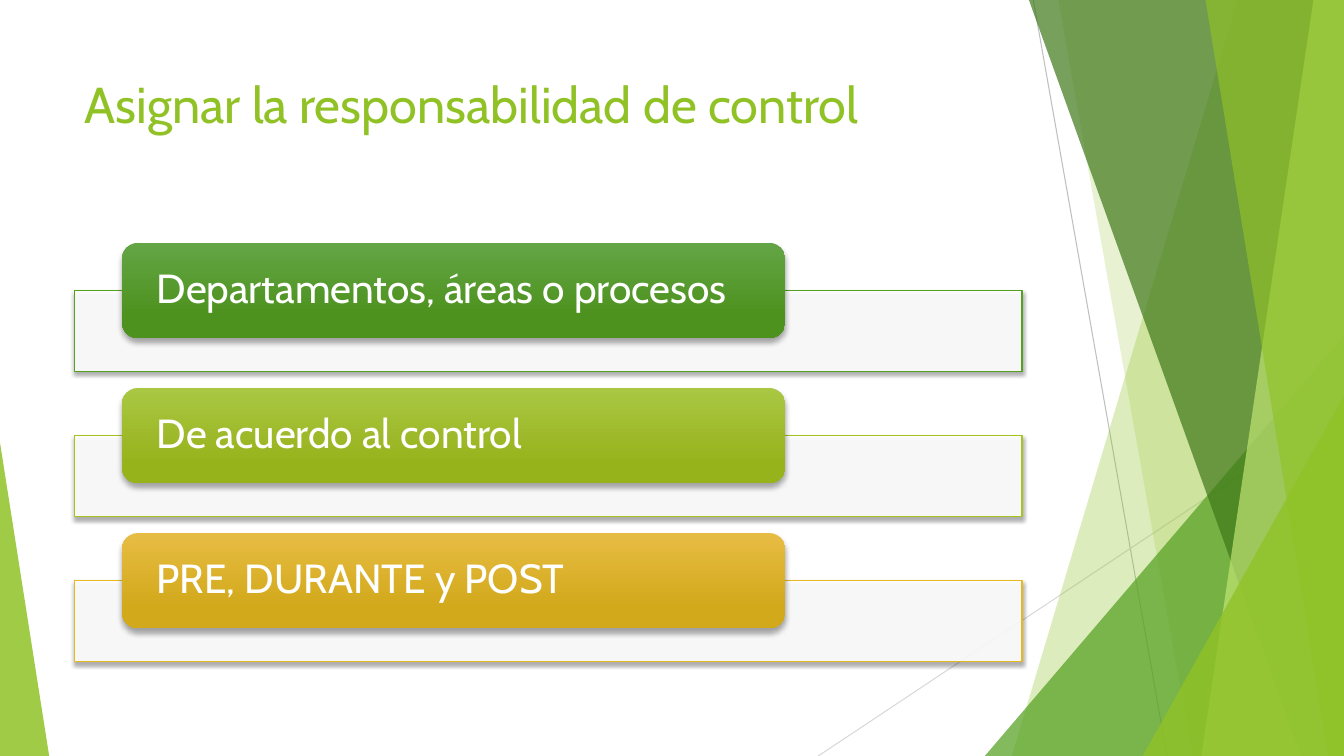
from collections import namedtuple
from dataclasses import dataclass

from lxml import etree
from pptx import Presentation
from pptx.dml.color import RGBColor
from pptx.enum import shapes, text
from pptx.oxml import ns
from pptx.util import Cm, Pt

Box = namedtuple("Box", "left top width height")
Card = namedtuple("Card", "label line light dark")


@dataclass(frozen=True)
class Theme:
    font: str = "Cabin"
    title_size: int = 36
    card_size: int = 29
    lime: str = "90C226"
    green: str = "54A021"
    forest: str = "3F7819"
    pale: str = "C0E474"
    white: str = "FFFFFF"
    shadow: str = "000000"
    ray_dark: str = "BFBFBF"
    ray_light: str = "D9D9D9"


THEME = Theme()
SLIDE = Box(0, 0, 33.87, 19.05)
CARDS = [
    Card("Departamentos, áreas o procesos", THEME.green, "63A545", "4D921E"),
    Card("De acuerdo al control", "A5C41F", "AAC744", "97B31C"),
    Card("PRE, DURANTE y POST", "E6B91E", "E7BC43", "D2A91B"),
]


def rgb(color):
    return RGBColor.from_string(color)


def add_alpha(color_element, percent):
    etree.SubElement(color_element, ns.qn("a:alpha"), val=str(percent * 1000))


def fill_solid(shape, color, opacity):
    shape.shadow.inherit = False
    shape.fill.solid()
    shape.fill.fore_color.rgb = rgb(color)
    add_alpha(shape.fill._xPr.find(".//" + ns.qn("a:srgbClr")), opacity)
    shape.line.fill.background()


def add_drop_shadow(shape, blur, distance):
    shape.shadow.inherit = False
    effects = shape._element.spPr.find(ns.qn("a:effectLst"))
    outer = etree.SubElement(
        effects, ns.qn("a:outerShdw"), blurRad=str(Pt(blur)),
        dist=str(Pt(distance)), dir="5400000", rotWithShape="0")
    color = etree.SubElement(outer, ns.qn("a:srgbClr"), val=THEME.shadow)
    add_alpha(color, 35)


def write(frame, content, *, size, color, anchor, side=0.25, edge=0.13, spacing=1.0):
    frame.word_wrap = True
    frame.auto_size = text.MSO_AUTO_SIZE.NONE
    frame.vertical_anchor = anchor
    frame.margin_left = frame.margin_right = Cm(side)
    frame.margin_top = frame.margin_bottom = Cm(edge)
    paragraph = frame.paragraphs[0]
    paragraph.alignment = text.PP_ALIGN.LEFT
    paragraph.line_spacing = spacing
    run = paragraph.add_run()
    run.text = content
    run.font.name = THEME.font
    run.font.size = Pt(size)
    run.font.color.rgb = rgb(color)


def add_preset(slide, kind, box):
    return slide.shapes.add_shape(kind, *(Cm(length) for length in box))


def add_ray(slide, start, end, color):
    ray = slide.shapes.add_connector(
        shapes.MSO_CONNECTOR.STRAIGHT, *(Cm(length) for length in start + end))
    ray.line.color.rgb = rgb(color)
    ray.line.width = Pt(0.75)
    etree.SubElement(ray._element.spPr, ns.qn("a:effectLst"))


def add_facet(slide, box, top_x, bottom_x, color, opacity):
    """Draw a band from a slanted left edge to the right side of the box."""
    right, bottom = box.left + box.width, box.top + box.height
    corners = [(box.left + top_x, box.top), (right, box.top),
               (right, bottom), (box.left + bottom_x, bottom)]
    points = [(Cm(x), Cm(y)) for x, y in corners]
    builder = slide.shapes.build_freeform(*points[0])
    builder.add_line_segments(points[1:], close=True)
    fill_solid(builder.convert_to_shape(), color, opacity)


def add_wedge(slide, box, apex, color, opacity):
    wedge = add_preset(slide, shapes.MSO_SHAPE.ISOSCELES_TRIANGLE, box)
    wedge.adjustments[0] = apex
    fill_solid(wedge, color, opacity)


def add_corner_wedge(slide, box, x, y, color, opacity):
    """Fill the lower right corner of the box, starting at the offset x, y."""
    corner = Box(box.left + x, box.top + y, box.width - x, box.height - y)
    add_wedge(slide, corner, 1, color, opacity)


def add_facets(slide, box):
    bottom = box.top + box.height
    add_ray(slide, (box.left + 5.42, box.top), (box.left + 8.79, bottom),
            THEME.ray_dark)
    add_ray(slide, (box.left + box.width, box.top + 10.24), (box.left, bottom),
            THEME.ray_light)
    add_facet(slide, box, 10.57, 4.88, THEME.lime, 30)
    add_facet(slide, box, 6.05, 9.43, THEME.lime, 20)
    add_corner_wedge(slide, box, 4.2, 8.46, THEME.green, 72)
    add_facet(slide, box, 5.31, 12.17, THEME.forest, 70)
    add_facet(slide, box, 12.48, 9.66, THEME.pale, 70)
    add_facet(slide, box, 9.76, 12.86, THEME.lime, 65)
    add_corner_wedge(slide, box, 8.18, 9.98, THEME.lime, 80)


def add_title(slide, box):
    title = slide.shapes.title
    title.left, title.top, title.width, title.height = (Cm(n) for n in box)
    write(title.text_frame, "Asignar la responsabilidad de control",
          size=THEME.title_size, color=THEME.lime, anchor=text.MSO_ANCHOR.TOP)


def add_card(slide, box, card):
    """Draw a pale panel with a coloured label over its upper edge."""
    label_height = 2.4
    overlap = label_height / 2
    panel = add_preset(slide, shapes.MSO_SHAPE.RECTANGLE, Box(
        box.left, box.top + overlap, box.width, box.height - overlap))
    fill_solid(panel, THEME.white, 90)
    panel.line.color.rgb = rgb(card.line)
    panel.line.width = Pt(1)
    add_drop_shadow(panel, 3, 2)

    label = add_preset(slide, shapes.MSO_SHAPE.ROUNDED_RECTANGLE, Box(
        box.left + box.width * 0.05, box.top, box.width * 0.7, label_height))
    label.fill.gradient()
    label.fill.gradient_angle = 270
    stops = zip(label.fill.gradient_stops, (0, 0.78), (card.light, card.dark))
    for stop, position, color in stops:
        stop.position = position
        stop.color.rgb = rgb(color)
    label.line.fill.background()
    add_drop_shadow(label, 4, 3)
    write(label.text_frame, card.label, size=THEME.card_size, color=THEME.white,
          anchor=text.MSO_ANCHOR.MIDDLE, side=0.76, edge=0, spacing=0.9)


def add_cards(slide, box):
    gap = 0.42
    height = (box.height - gap * (len(CARDS) - 1)) / len(CARDS)
    for row, card in enumerate(CARDS):
        top = box.top + row * (height + gap)
        add_card(slide, Box(box.left, top, box.width, height), card)


def main():
    deck = Presentation()
    deck.slide_width, deck.slide_height = Cm(SLIDE.width), Cm(SLIDE.height)
    slide = deck.slides.add_slide(deck.slide_layouts[5])
    add_facets(slide, Box(20.62, 0, SLIDE.width - 20.62, SLIDE.height))
    add_wedge(slide, Box(0, 11.15, 1.24, SLIDE.height - 11.15), 0, THEME.lime, 85)
    add_title(slide, Box(1.88, 1.7, 23.88, 3.66))
    add_cards(slide, Box(1.88, 6.12, 23.88, 10.55))
    deck.save("out.pptx")


if __name__ == "__main__":
    main()
